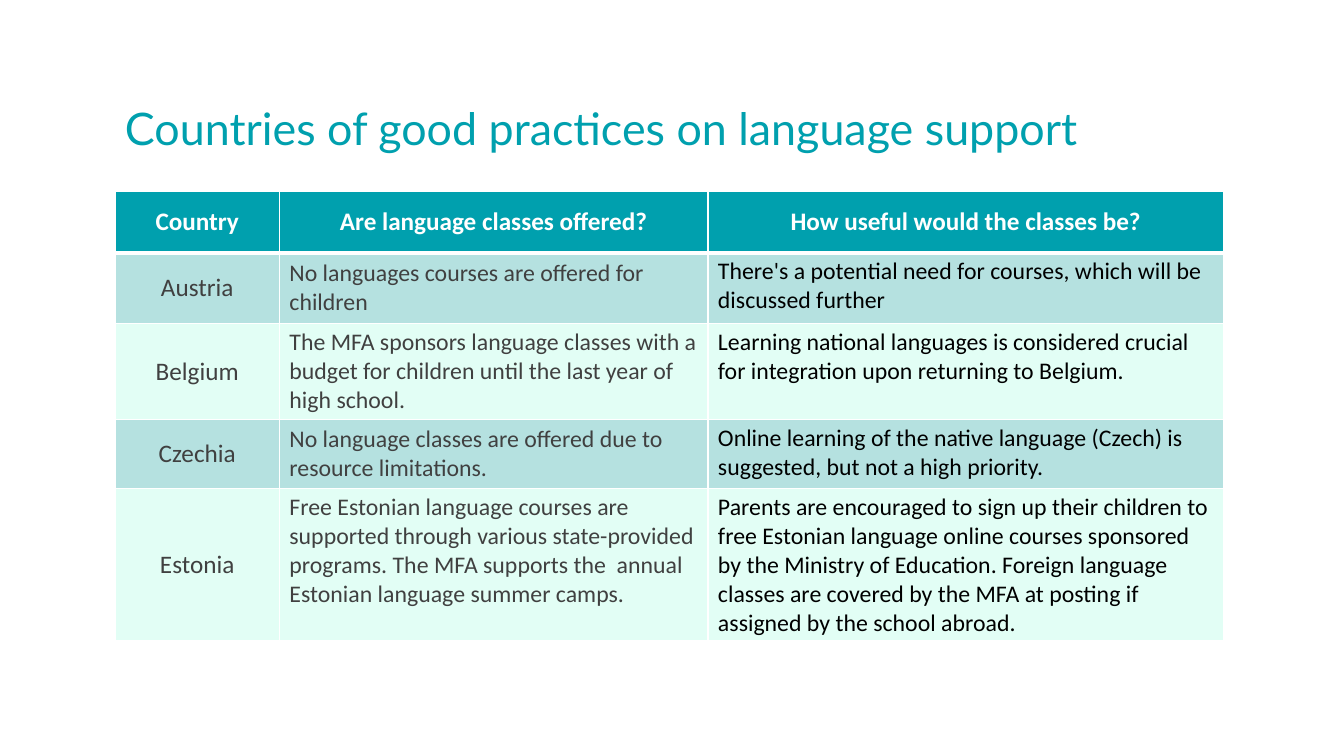
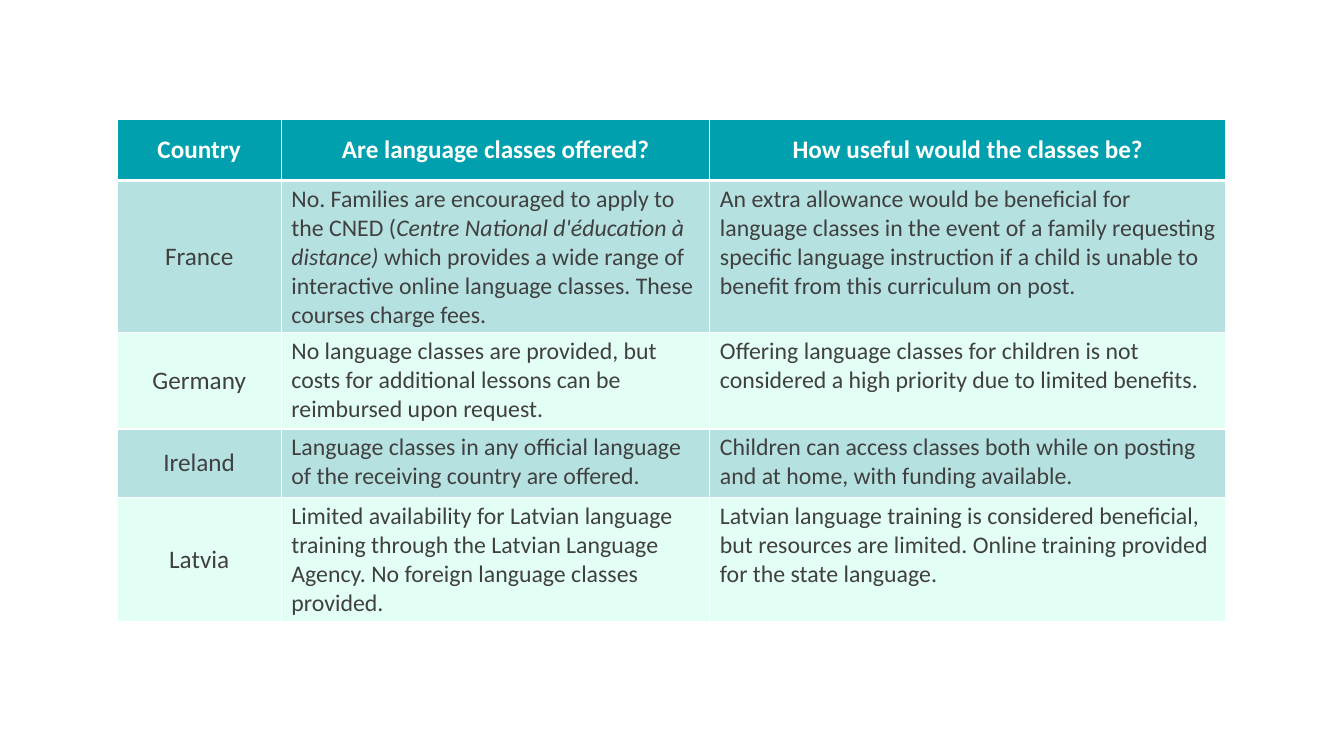
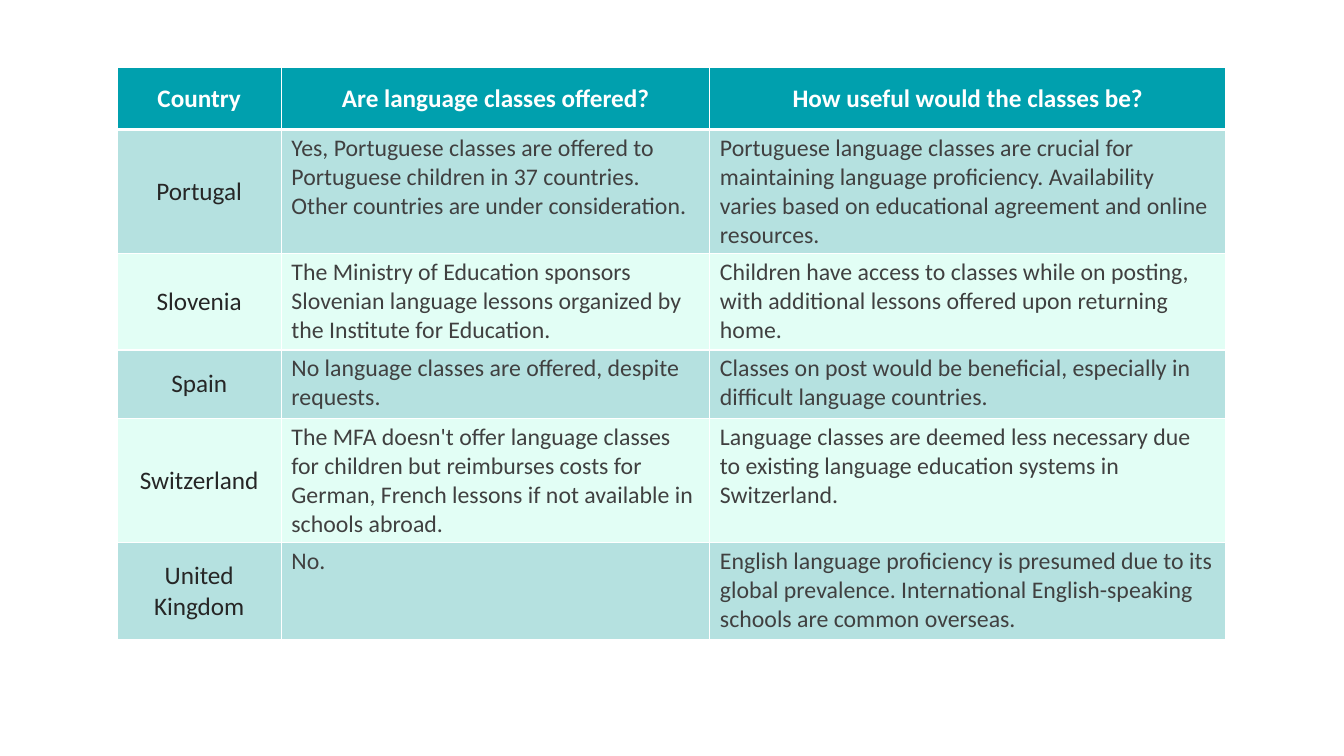
import pptx
import pptx.dml.color
import pptx.enum.text
import pptx.util
from lxml import etree
from pptx.dml.color import RGBColor
from pptx.enum.text import MSO_ANCHOR, MSO_AUTO_SIZE, PP_ALIGN
from pptx.util import Cm, Pt

TEAL = RGBColor(0x00, 0xA0, 0xAE)
AQUA = RGBColor(0xB5, 0xE1, 0xE0)
MINT = RGBColor(0xE2, 0xFE, 0xF5)
WHITE = RGBColor(0xFF, 0xFF, 0xFF)
BLACK = RGBColor(0x00, 0x00, 0x00)
GREY = RGBColor(0x40, 0x40, 0x40)
CHARCOAL = RGBColor(0x26, 0x26, 0x26)

HEADINGS = ["Country", "Are language classes offered?", "How useful would the classes be?"]
COLUMN_WIDTHS = [4.14, 10.8, 13]
HEADER_HEIGHT = 1.55
DRAWING = "http://schemas.openxmlformats.org/drawingml/2006/main"


class CountryDeck:
    """Style of the deck and the slide being filled."""

    def __init__(self):
        self.deck = pptx.Presentation()
        self.deck.slide_width = Cm(33.87)
        self.deck.slide_height = Cm(19.05)
        self.page = None

    def add_page(self):
        self.page = self.deck.slides.add_slide(self.deck.slide_layouts[6])

    def title(self, text):
        box = self.page.shapes.add_textbox(Cm(2.9), Cm(2.41), Cm(25.93), Cm(1.63))
        box.text_frame.word_wrap = True
        box.text_frame.auto_size = MSO_AUTO_SIZE.SHAPE_TO_FIT_TEXT
        para = box.text_frame.paragraphs[0]
        para.text = text
        para.font.name = "Lato"
        para.font.size = Pt(32)
        para.font.color.rgb = TEAL

    def borders(self, cell, top, bottom):
        properties = cell._tc.get_or_add_tcPr()
        for side, width in (("L", 1), ("R", 1), ("T", top), ("B", bottom)):
            line = etree.SubElement(properties, f"{{{DRAWING}}}ln{side}", w=str(Pt(width)))
            fill = etree.SubElement(line, f"{{{DRAWING}}}solidFill")
            etree.SubElement(fill, f"{{{DRAWING}}}srgbClr", val=str(WHITE))

    def cell(self, cell, content, fill, color, size=17, bold=False, centred=False, middle=False):
        """Content is a text, or a list of texts of which every second is italic."""
        cell.fill.solid()
        cell.fill.fore_color.rgb = fill
        cell.margin_top = cell.margin_bottom = Cm(0.1)
        cell.vertical_anchor = MSO_ANCHOR.MIDDLE if middle else MSO_ANCHOR.TOP
        para = cell.text_frame.paragraphs[0]
        para.alignment = PP_ALIGN.CENTER if centred else PP_ALIGN.LEFT
        for index, text in enumerate([content] if isinstance(content, str) else content):
            span = para.add_run()
            span.text = text
            span.font.name = "Calibri"
            span.font.size = Pt(size)
            span.font.bold = bold
            span.font.italic = index % 2 == 1
            span.font.color.rgb = color

    def country_table(self, left, top, rows, country_color=GREY, useful_color=GREY, middle_rows=0):
        """Each row is (height, country, offered, useful)."""
        heights = [HEADER_HEIGHT] + [row[0] for row in rows]
        table = self.page.shapes.add_table(
            len(heights), len(HEADINGS), Cm(left), Cm(top),
            Cm(sum(COLUMN_WIDTHS)), Cm(sum(heights))).table
        table.horz_banding = False
        for column, width in zip(table.columns, COLUMN_WIDTHS):
            column.width = Cm(width)
        for table_row, height in zip(table.rows, heights):
            table_row.height = Cm(height)

        # Header row, set off by a thicker line
        for cell, heading in zip(table.rows[0].cells, HEADINGS):
            self.borders(cell, 1, 3)
            self.cell(cell, heading, TEAL, WHITE, 18, bold=True, centred=True, middle=True)

        # Country rows in alternating tints
        for number, (_, country, offered, useful) in enumerate(rows, start=1):
            tint = AQUA if number % 2 else MINT
            cells = table.rows[number].cells
            for cell in cells:
                self.borders(cell, 3 if number == 1 else 1, 1)
            self.cell(cells[0], country, tint, country_color, 18, centred=True, middle=True)
            self.cell(cells[1], offered, tint, GREY, middle=number <= middle_rows)
            self.cell(cells[2], useful, tint, useful_color)


def lines(count):
    """Height in cm of a row with that many lines of text."""
    return 0.7 * count + 0.33


def main():
    show = CountryDeck()

    # Austria to Estonia
    show.add_page()
    show.title("Countries of good practices on language support")
    show.country_table(2.9, 4.82, [
        (1.78, "Austria",
         "No languages courses are offered for children",
         "There's a potential need for courses, which will be discussed further"),
        (lines(3), "Belgium",
         "The MFA sponsors language classes with a budget for children until the last year of "
         "high school.",
         "Learning national languages is considered crucial for integration upon returning to "
         "Belgium."),
        (lines(2), "Czechia",
         "No language classes are offered due to resource limitations.",
         "Online learning of the native language (Czech) is suggested, but not a high priority."),
        (lines(5), "Estonia",
         "Free Estonian language courses are supported through various state-provided programs. "
         "The MFA supports the  annual Estonian language summer camps.",
         "Parents are encouraged to sign up their children to free Estonian language online "
         "courses sponsored by the Ministry of Education. Foreign language classes are covered "
         "by the MFA at posting if assigned by the school abroad."),
    ], useful_color=BLACK, middle_rows=3)

    # France to Latvia
    show.add_page()
    show.country_table(2.95, 3, [
        (lines(5), "France",
         ["No. Families are encouraged to apply to the CNED (",
          "Centre National d'éducation à distance)",
          " which provides a wide range of interactive online language classes. These courses "
          "charge fees."],
         "An extra allowance would be beneficial for language classes in the event of a family "
         "requesting specific language instruction if a child is unable to benefit from this "
         "curriculum on post."),
        (lines(3), "Germany",
         "No language classes are provided, but costs for additional lessons can be reimbursed "
         "upon request.",
         "Offering language classes for children is not considered a high priority due to "
         "limited benefits."),
        (lines(2), "Ireland",
         "Language classes in any official language of the receiving country are offered.",
         "Children can access classes both while on posting and at home, with funding available."),
        (lines(4), "Latvia",
         "Limited availability for Latvian language training through the Latvian Language "
         "Agency. No foreign language classes provided.",
         "Latvian language training is considered beneficial, but resources are limited. Online "
         "training provided for the state language."),
    ])

    # Portugal to the United Kingdom
    show.add_page()
    show.country_table(2.95, 1.71, [
        (lines(4), "Portugal",
         "Yes, Portuguese classes are offered to Portuguese children in 37 countries. Other "
         "countries are under consideration.",
         "Portuguese language classes are crucial for maintaining language proficiency. "
         "Availability varies based on educational agreement and online resources."),
        (lines(3), "Slovenia",
         "The Ministry of Education sponsors Slovenian language lessons organized by the "
         "Institute for Education.",
         "Children have access to classes while on posting, with additional lessons offered "
         "upon returning home."),
        (lines(2), "Spain",
         "No language classes are offered, despite requests.",
         "Classes on post would be beneficial, especially in difficult language countries."),
        (lines(4), "Switzerland",
         "The MFA doesn't offer language classes for children but reimburses costs for German, "
         "French lessons if not available in schools abroad.",
         "Language classes are deemed less necessary due to existing language education systems "
         "in Switzerland."),
        (lines(3), "United Kingdom",
         "No.",
         "English language proficiency is presumed due to its global prevalence. International "
         "English-speaking schools are common overseas."),
    ], country_color=CHARCOAL)

    show.deck.save("out.pptx")


if __name__ == "__main__":
    main()
